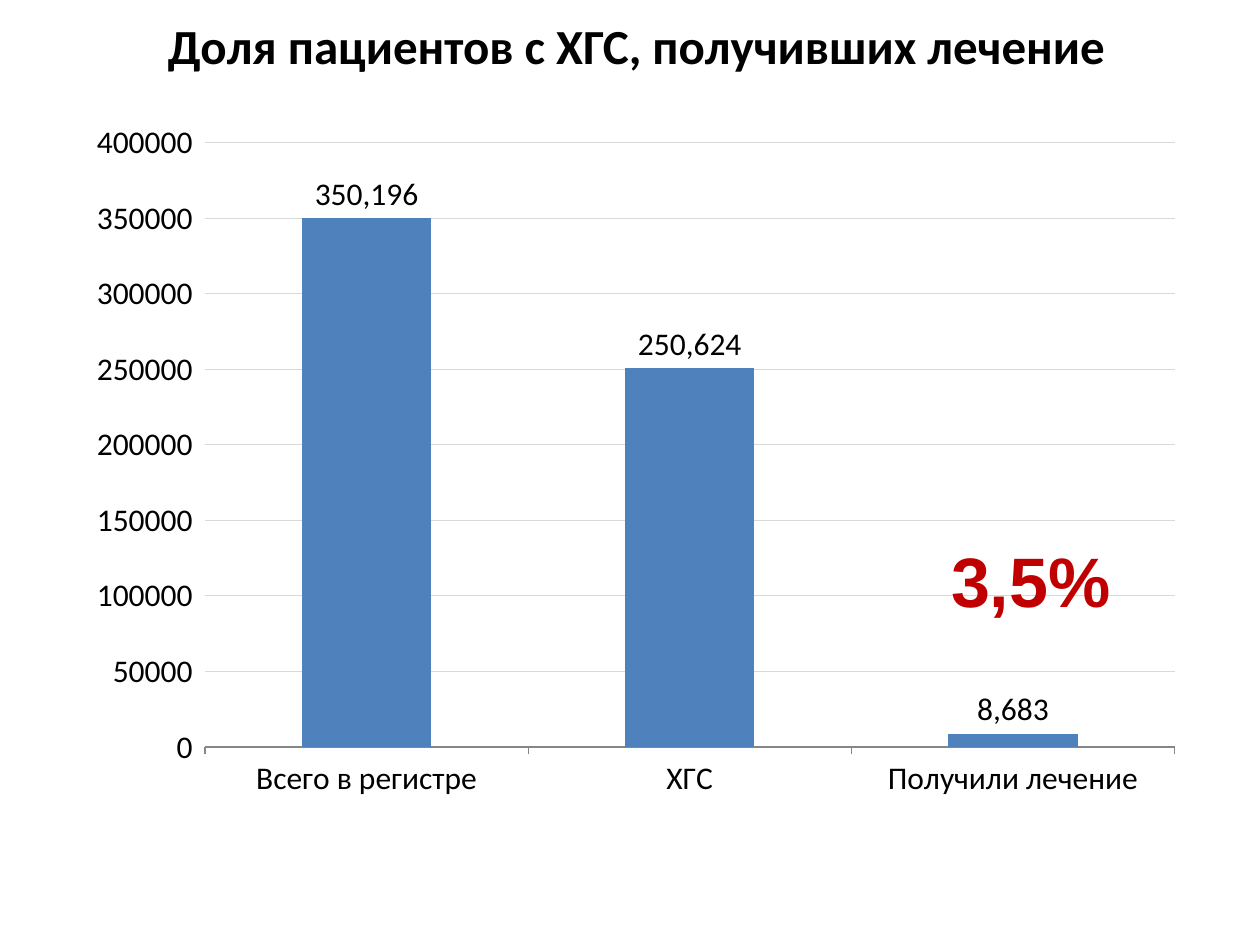
from pptx import Presentation
from pptx.chart.data import CategoryChartData
from pptx.dml.color import RGBColor
from pptx.enum.chart import XL_CHART_TYPE, XL_LABEL_POSITION, XL_TICK_MARK
from pptx.enum.text import MSO_ANCHOR, PP_ALIGN
from pptx.util import Pt

COLUMNS = XL_CHART_TYPE.COLUMN_CLUSTERED
OUTSIDE_END = XL_LABEL_POSITION.OUTSIDE_END
TICK_OUT, TICK_NONE = XL_TICK_MARK.OUTSIDE, XL_TICK_MARK.NONE
MIDDLE, TOP = MSO_ANCHOR.MIDDLE, MSO_ANCHOR.TOP
CENTER = PP_ALIGN.CENTER

TITLE = "Доля пациентов с ХГС, получивших лечение"
SHARE = "3,5%"
PATIENTS = {"Всего в регистре": 350196, "ХГС": 250624, "Получили лечение": 8683}

TITLE_BOX = (39.6, -19.44, 648, 90)
CHART_BOX = (42.48, 62.64, 641.52, 401.04)
SHARE_BOX = (535.68, 303.84, 106.56, 55.44)


def color(value):
    return RGBColor.from_string(value)


def points(box):
    return [Pt(length) for length in box]


def style_font(font, name, size, fill, bold=False):
    font.name = name
    font.size = Pt(size)
    font.bold = bold
    font.color.rgb = color(fill)


def add_text(slide, box, text, name, size, fill, anchor, wrap):
    text_frame = slide.shapes.add_textbox(*points(box)).text_frame
    text_frame.word_wrap = wrap
    text_frame.vertical_anchor = anchor
    text_frame.text = text
    paragraph = text_frame.paragraphs[0]
    paragraph.alignment = CENTER
    style_font(paragraph.runs[0].font, name, size, fill, bold=True)


def add_patient_chart(slide):
    data = CategoryChartData()
    data.categories = list(PATIENTS)
    data.add_series("Series 1", list(PATIENTS.values()))
    chart = slide.shapes.add_chart(COLUMNS, *points(CHART_BOX), data).chart
    chart.has_legend = False
    chart.has_title = False
    style_font(chart.font, "Calibri", 18, "000000")

    category_axis = chart.category_axis
    category_axis.major_tick_mark = TICK_OUT
    category_axis.format.line.color.rgb = color("868686")
    category_axis.format.line.width = Pt(0.75)

    value_axis = chart.value_axis
    value_axis.minimum_scale = 0
    value_axis.maximum_scale = 400000
    value_axis.major_unit = 50000
    value_axis.major_tick_mark = TICK_OUT
    value_axis.minor_tick_mark = TICK_NONE
    value_axis.format.line.fill.background()
    value_axis.tick_labels.number_format = "General"
    value_axis.tick_labels.number_format_is_linked = False
    gridline = value_axis.major_gridlines.format.line
    gridline.color.rgb = color("D9D9D9")
    gridline.width = Pt(0.75)

    plot = chart.plots[0]
    plot.gap_width = 150
    plot.vary_by_categories = False
    series = plot.series[0]
    series.format.fill.solid()
    series.format.fill.fore_color.rgb = color("4F81BD")
    labels = series.data_labels
    labels.show_value = True
    labels.number_format = "#,##0"
    labels.number_format_is_linked = False
    labels.position = OUTSIDE_END
    style_font(labels.font, "Calibri", 18, "000000")


def main():
    presentation = Presentation()
    presentation.slide_width, presentation.slide_height = Pt(720), Pt(540)
    slide = presentation.slides.add_slide(presentation.slide_layouts[6])
    add_text(slide, TITLE_BOX, TITLE, "Calibri", 28, "000000", MIDDLE, True)
    add_patient_chart(slide)
    add_text(slide, SHARE_BOX, SHARE, "Arial", 40, "C00000", TOP, False)
    presentation.save("out.pptx")


if __name__ == "__main__":
    main()
